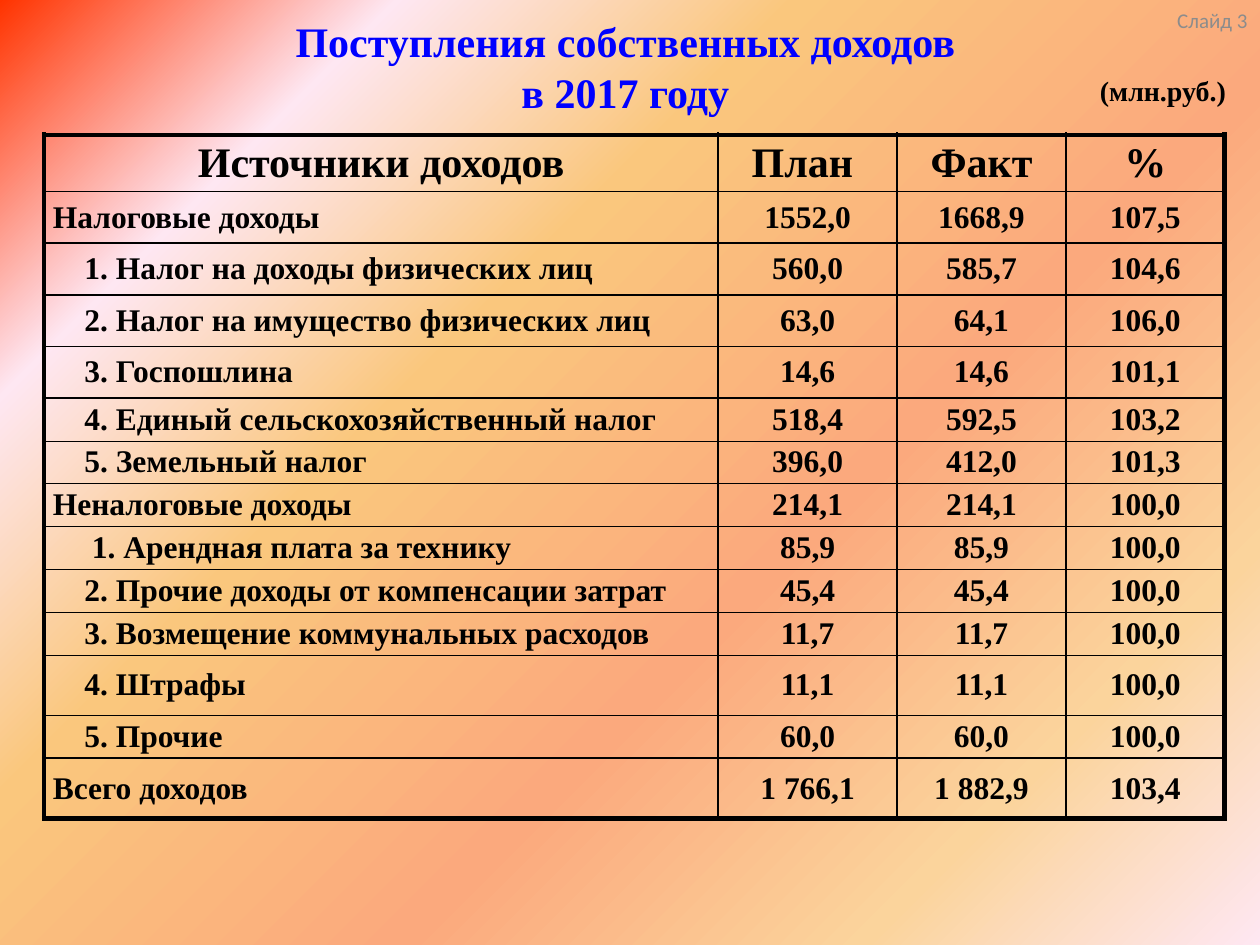
from dataclasses import dataclass

from lxml import etree
from pptx import Presentation
from pptx import util as u
from pptx.dml.color import RGBColor
from pptx.enum import text
from pptx.oxml import ns


@dataclass(frozen=True)
class Theme:
    serif: str = "Times New Roman"
    sans: str = "Calibri"
    blue: str = "0000FF"
    black: str = "000000"
    grey: str = "8C8C8C"
    head: int = 24
    body: int = 18
    unit: int = 16
    note: int = 12
    thick: float = 3
    thin: float = 1
    hair: float = 0.5
    stops: tuple = ((0, "FF3300"), (18, "FEE7F2"), (36, "FAC77D"),
                    (61, "FBA97D"), (82, "FBD49C"), (100, "FEE7F2"))


T = Theme()
ALIGN = text.PP_ALIGN
MID = text.MSO_ANCHOR.MIDDLE
PAD = 0.07
STEP = 0.25
COLS = (5.35, 1.42, 1.34, 1.26)
HEAD = ("Источники доходов", "План ", "Факт", "%")
ROWS = (
    (0.41, 0, "Налоговые доходы", "1552,0", "1668,9", "107,5"),
    (0.41, STEP, "1. Налог на доходы физических лиц", "560,0", "585,7", "104,6"),
    (0.41, STEP, "2. Налог на имущество физических лиц", "63,0", "64,1", "106,0"),
    (0.41, STEP, "3. Госпошлина", "14,6", "14,6", "101,1"),
    (0.34, STEP, "4. Единый сельскохозяйственный налог", "518,4", "592,5", "103,2"),
    (0.34, STEP, "5. Земельный налог", "396,0", "412,0", "101,3"),
    (0.34, 0, "Неналоговые доходы", "214,1", "214,1", "100,0"),
    (0.34, 0.31, "1. Арендная плата за технику", "85,9", "85,9", "100,0"),
    (0.34, STEP, "2. Прочие доходы от компенсации затрат", "45,4", "45,4", "100,0"),
    (0.34, STEP, "3. Возмещение коммунальных расходов", "11,7", "11,7", "100,0"),
    (0.48, STEP, "4. Штрафы", "11,1", "11,1", "100,0"),
    (0.34, STEP, "5. Прочие", "60,0", "60,0", "100,0"),
    (0.48, 0, "Всего доходов", "1 766,1", "1 882,9", "103,4"),
)
FINE = {6, 10, 11}


def paint(slide):
    fill = slide.background.fill
    fill.gradient()
    fill.gradient_angle = 315
    stops = slide.element.find(".//" + ns.qn("a:gsLst"))
    for old in list(stops):
        stops.remove(old)
    for spot, tone in T.stops:
        stop = etree.SubElement(stops, ns.qn("a:gs"), pos=str(spot * 1000))
        etree.SubElement(stop, ns.qn("a:srgbClr"), val=tone)


def place(shape, left, top, width, height):
    shape.left, shape.top = u.Inches(left), u.Inches(top)
    shape.width, shape.height = u.Inches(width), u.Inches(height)


def write(frame, words, size, tone=T.black, face=T.serif, bold=True, align=ALIGN.CENTER):
    para = frame.paragraphs[0]
    para.text = words
    para.alignment = align
    for run in para.runs:
        font = run.font
        font.name, font.size, font.bold = face, u.Pt(size), bold
        font.color.rgb = RGBColor.from_string(tone)


def label(slide, box, words, size, anchor=MID, side=0.05, top=0.05, **style):
    shape = slide.shapes.add_textbox(*map(u.Inches, box))
    frame = shape.text_frame
    frame.word_wrap = True
    frame.vertical_anchor = anchor
    frame.margin_left = frame.margin_right = u.Inches(side)
    frame.margin_top = u.Inches(top)
    write(frame, words, size, **style)


def rule(cell, sides):
    props = cell._tc.get_or_add_tcPr()
    for side, width in zip("LRTB", sides):
        line = etree.SubElement(props, ns.qn("a:ln" + side), w=str(u.Pt(width)))
        fill = etree.SubElement(line, ns.qn("a:solidFill"))
        etree.SubElement(fill, ns.qn("a:srgbClr"), val=T.black)


def weight(edge, last):
    if edge in (0, last):
        return T.thick
    return T.thin


def level(edge, last):
    return T.hair if edge in FINE else weight(edge, last)


def grid(slide):
    rows = ((0.45, 0, *HEAD), *ROWS)
    high, wide = len(rows), len(COLS)
    tall = sum(row[0] for row in rows)
    box = map(u.Inches, (0.35, 1.07, sum(COLS), tall))
    table = slide.shapes.add_table(high, wide, *box).table
    table.first_row = table.horz_banding = False
    for col, width in zip(table.columns, COLS):
        col.width = u.Inches(width)
    for r, (height, indent, *words) in enumerate(rows):
        table.rows[r].height = u.Inches(height)
        for c, word in enumerate(words):
            cell = table.cell(r, c)
            name = r > 0 and c == 0
            cell.margin_left = u.Inches(PAD + (indent if name else 0))
            cell.margin_right = u.Inches(PAD)
            cell.margin_top = cell.margin_bottom = 0
            cell.vertical_anchor = MID
            rule(cell, (weight(c, wide), weight(c + 1, wide),
                        level(r, high), level(r + 1, high)))
            cell.fill.background()
            write(cell.text_frame, word, T.body if r else T.head,
                  align=ALIGN.JUSTIFY if name else ALIGN.CENTER)


def main():
    deck = Presentation()
    deck.slide_width, deck.slide_height = u.Inches(10), u.Inches(7.5)
    slide = deck.slides.add_slide(deck.slide_layouts[5])
    paint(slide)
    title = slide.shapes.title
    place(title, 0.28, 0.13, 9.45, 0.79)
    title.text_frame.vertical_anchor = MID
    write(title.text_frame, "Поступления собственных доходов \vв 2017 году ", T.head, T.blue)
    label(slide, (8.62, 0.52, 1.22, 0.39), "(млн.руб.)", T.unit)
    label(slide, (9.17, 0, 0.83, 0.52), "Слайд 3", T.note, text.MSO_ANCHOR.TOP,
          0.1, 0.06, tone=T.grey, face=T.sans, bold=False, align=ALIGN.RIGHT)
    grid(slide)
    deck.save("out.pptx")


if __name__ == "__main__":
    main()
